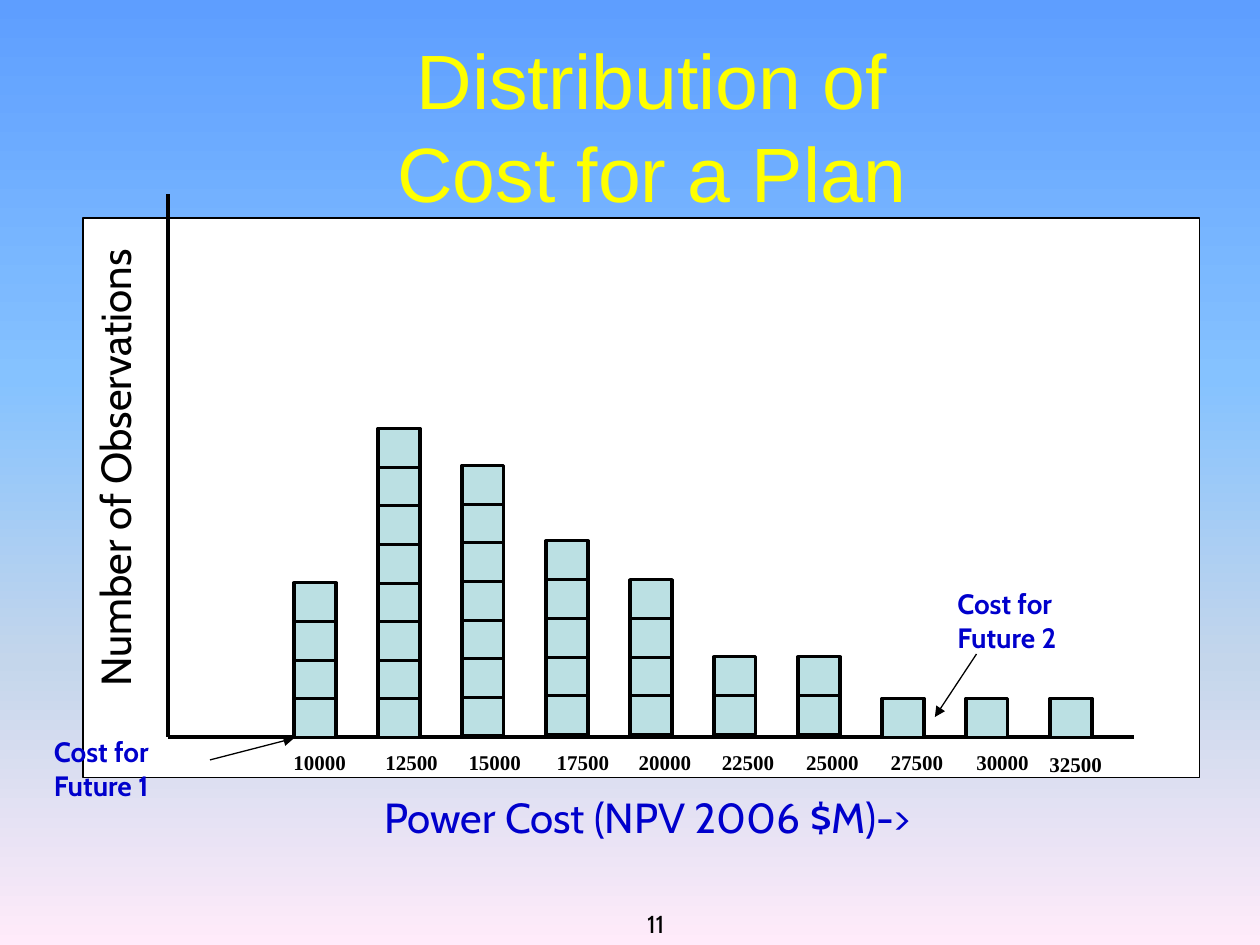
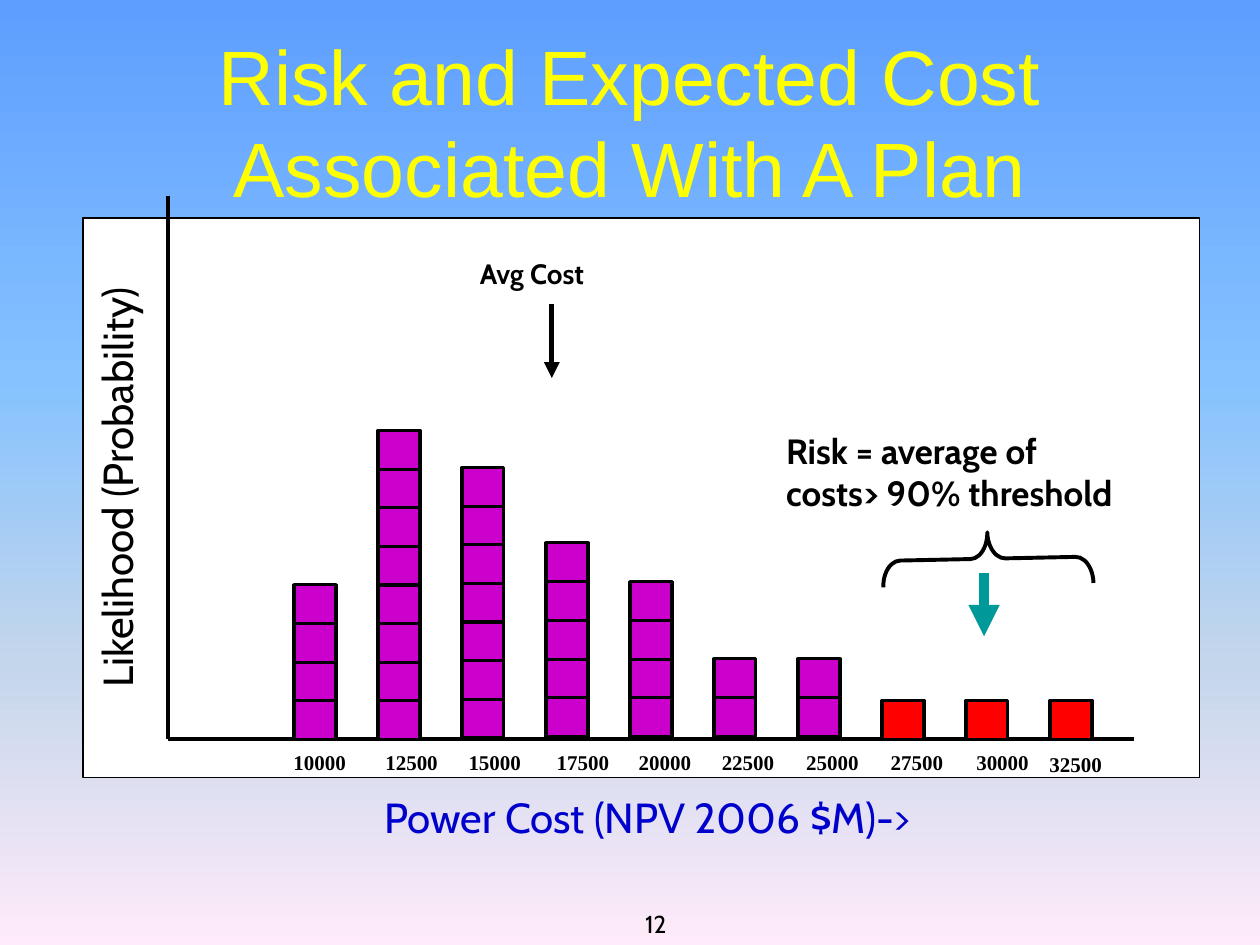
from dataclasses import dataclass
from typing import NamedTuple

from lxml import etree
from pptx import Presentation
from pptx.dml.color import RGBColor
from pptx.enum.shapes import MSO_CONNECTOR, MSO_SHAPE
from pptx.enum.text import MSO_ANCHOR, MSO_AUTO_SIZE, PP_ALIGN
from pptx.oxml.ns import qn
from pptx.util import Emu, Inches, Pt

RECTANGLE = MSO_SHAPE.RECTANGLE
BRACE = MSO_SHAPE.RIGHT_BRACE
STRAIGHT = MSO_CONNECTOR.STRAIGHT
LEFT, CENTER = PP_ALIGN.LEFT, PP_ALIGN.CENTER
TOP, MIDDLE, BOTTOM = MSO_ANCHOR.TOP, MSO_ANCHOR.MIDDLE, MSO_ANCHOR.BOTTOM
GROW, FIXED = MSO_AUTO_SIZE.SHAPE_TO_FIT_TEXT, MSO_AUTO_SIZE.NONE

SLIDE_WIDTH, SLIDE_HEIGHT = Inches(10), Inches(7.5)
GRID_COLUMNS, GRID_ROWS = 30, 24

BLACK, WHITE = "000000", "FFFFFF"
YELLOW, BLUE, TEAL = "FFFF00", "0000CC", "009999"
PALE_BLUE, PURPLE, RED = "BBE0E3", "CC00CC", "FF0000"
SKY = [(0, "5E9EFF"), (40, "85C2FF"), (70, "C4D6EB"), (100, "FFEBFA")]

BODY_FONT, TITLE_FONT, TICK_FONT = "Cabin", "Arial", "Times New Roman"

AXIS_COLUMN, AXIS_END = 4, 27
FIRST_STACK, STACK_STEP = 7, 2
BLOCK_HEIGHT, BLOCK_STEP = 0.99, 0.98
TICK_ROW = 18.88


class Area(NamedTuple):
    column: float
    row: float
    columns: float
    rows: float


class Point(NamedTuple):
    column: float
    row: float


class Stack(NamedTuple):
    cost: int
    observations: int
    label_column: float
    lift: float = 0
    label_drop: float = 0


@dataclass
class Histogram:
    title: str
    title_area: Area
    axis_label: str
    axis_label_area: Area
    axis_top: float
    axis_base: float
    block_color: str
    risk_color: str
    number: str


STACKS = [
    Stack(10000, 4, 6.69),
    Stack(12500, 8, 8.88),
    Stack(15000, 7, 10.86, lift=0.04),
    Stack(17500, 5, 12.96, lift=0.08),
    Stack(20000, 4, 14.91, lift=0.08),
    Stack(22500, 2, 16.89, lift=0.08),
    Stack(25000, 2, 18.9, lift=0.08),
    Stack(27500, 1, 20.91),
    Stack(30000, 1, 22.95),
    Stack(32500, 1, 24.69, label_drop=0.06),
]
RISK_THRESHOLD = 27500

DISTRIBUTION = Histogram(
    title="Distribution of\nCost for a Plan",
    title_area=Area(2.79, 0.77, 25.47, 4.83),
    axis_label="Number of Observations",
    axis_label_area=Area(-2.91, 10.91, 11.31, 1.6),
    axis_top=4.93, axis_base=18.72,
    block_color=PALE_BLUE, risk_color=PALE_BLUE, number="11",
)
RISK = Histogram(
    title="Risk and Expected Cost Associated With A Plan",
    title_area=Area(2.25, 0.8, 25.5, 4.54),
    axis_label="Likelihood (Probability)",
    axis_label_area=Area(-2.58, 11.26, 10.71, 1.6),
    axis_top=4.97, axis_base=18.77,
    block_color=PURPLE, risk_color=RED, number="12",
)


def across(columns: float) -> Emu:
    return Emu(round(SLIDE_WIDTH * columns / GRID_COLUMNS))


def down(rows: float) -> Emu:
    return Emu(round(SLIDE_HEIGHT * rows / GRID_ROWS))


def place(area: Area) -> tuple:
    return (across(area.column), down(area.row),
            across(area.columns), down(area.rows))


def color(value: str) -> RGBColor:
    return RGBColor.from_string(value)


def paint_background(page) -> None:
    fill = page.background.fill
    fill.gradient()
    fill.gradient_angle = 270
    stops = page.element.find(".//" + qn("a:gsLst"))
    for stop in list(stops):
        stops.remove(stop)
    for percent, value in SKY:
        stop = etree.SubElement(stops, qn("a:gs"), pos=str(percent * 1000))
        etree.SubElement(stop, qn("a:srgbClr"), val=value)


def add_text(page, text: str, area: Area, *, size: float = 24,
             font: str = BODY_FONT, ink: str = BLACK, bold: bool = False,
             align=LEFT, anchor=TOP, fit=GROW, wrap: bool = False,
             rotation: float = 0) -> None:
    box = page.shapes.add_textbox(*place(area))
    box.rotation = rotation
    frame = box.text_frame
    frame.word_wrap = wrap
    frame.auto_size = fit
    frame.vertical_anchor = anchor
    for index, line in enumerate(text.split("\n")):
        para = frame.add_paragraph() if index else frame.paragraphs[0]
        para.alignment = align
        span = para.add_run()
        span.text = line
        span.font.name = font
        span.font.size = Pt(size)
        span.font.bold = bold
        span.font.color.rgb = color(ink)


def add_outlined(page, preset, area: Area, *, fill: str = "",
                 weight: float = 1.75):
    shape = page.shapes.add_shape(preset, *place(area))
    shape.shadow.inherit = False
    if fill:
        shape.fill.solid()
        shape.fill.fore_color.rgb = color(fill)
    else:
        shape.fill.background()
    shape.line.color.rgb = color(BLACK)
    shape.line.width = Pt(weight)
    return shape


def add_line(page, start: Point, end: Point, *, weight: float = 2.25,
             ink: str = BLACK, arrow: bool = False) -> None:
    line = page.shapes.add_connector(
        STRAIGHT, across(start.column), down(start.row),
        across(end.column), down(end.row))
    line.line.color.rgb = color(ink)
    line.line.width = Pt(weight)
    properties = line.element.spPr
    if arrow:
        etree.SubElement(properties.find(qn("a:ln")), qn("a:tailEnd"),
                         type="triangle")
    etree.SubElement(properties, qn("a:effectLst"))


def add_stack(page, index: int, stack: Stack, histogram: Histogram) -> None:
    risky = stack.cost >= RISK_THRESHOLD
    fill = histogram.risk_color if risky else histogram.block_color
    column = FIRST_STACK + index * STACK_STEP
    for level in range(1, stack.observations + 1):
        row = histogram.axis_base - stack.lift - level * BLOCK_STEP
        add_outlined(page, RECTANGLE, Area(column, row, 1, BLOCK_HEIGHT),
                     fill=fill)
    label_row = TICK_ROW + stack.label_drop
    add_text(page, str(stack.cost),
             Area(stack.label_column, label_row, 1.86, 0.96),
             size=12, font=TICK_FONT, bold=True, wrap=True)


def add_histogram(deck, histogram: Histogram):
    page = deck.slides.add_slide(deck.slide_layouts[6])
    paint_background(page)
    add_text(page, histogram.number, Area(10.86, 22.4, 9.51, 1.6), size=14,
             align=CENTER, anchor=BOTTOM, fit=FIXED, wrap=True)
    add_outlined(page, RECTANGLE, Area(1.98, 5.54, 26.58, 14.21),
                 fill=WHITE, weight=1)
    add_text(page, histogram.title, histogram.title_area, size=44,
             font=TITLE_FONT, ink=YELLOW, align=CENTER, anchor=MIDDLE,
             fit=FIXED, wrap=True)
    origin = Point(AXIS_COLUMN, histogram.axis_base)
    add_line(page, Point(AXIS_COLUMN, histogram.axis_top), origin)
    add_line(page, origin, Point(AXIS_END, histogram.axis_base))
    add_text(page, histogram.axis_label, histogram.axis_label_area,
             rotation=270)
    for index, stack in enumerate(STACKS):
        add_stack(page, index, stack, histogram)
    add_text(page, "Power Cost (NPV 2006 $M)->",
             Area(8.85, 19.94, 13.68, 1.6), ink=BLUE)
    return page


def add_future(page, text: str, corner: Point, start: Point,
               end: Point) -> None:
    add_text(page, text, Area(*corner, 3.42, 2.05), size=16, ink=BLUE,
             bold=True)
    add_line(page, start, end, weight=0.75, arrow=True)


def add_risk_notes(page) -> None:
    add_text(page, "Avg Cost", Area(11.13, 6.37, 3.54, 1.18), size=16,
             bold=True)
    add_line(page, Point(13.14, 7.71), Point(13.14, 9.6), weight=3,
             arrow=True)
    brace = add_outlined(page, BRACE, Area(22.89, 11.52, 1.26, 5.34),
                         weight=2.25)
    brace.rotation = 268.8
    brace.adjustments[0] = 0.33
    add_text(page, "Risk = average of\ncosts> 90% threshold",
             Area(18.42, 10.75, 10.56, 2.46), size=20, bold=True, wrap=True)
    add_line(page, Point(23.43, 14.56), Point(23.43, 16.16), weight=6,
             ink=TEAL, arrow=True)


def main() -> None:
    deck = Presentation()
    deck.slide_width, deck.slide_height = SLIDE_WIDTH, SLIDE_HEIGHT
    distribution = add_histogram(deck, DISTRIBUTION)
    add_future(distribution, "Cost for\nFuture 2", Point(22.5, 14.75),
               Point(23.25, 16.61), Point(22.26, 18.21))
    add_future(distribution, "Cost for\nFuture 1", Point(0.99, 18.5),
               Point(5, 19.3), Point(7, 18.75))
    add_risk_notes(add_histogram(deck, RISK))
    deck.save("out.pptx")


if __name__ == "__main__":
    main()
